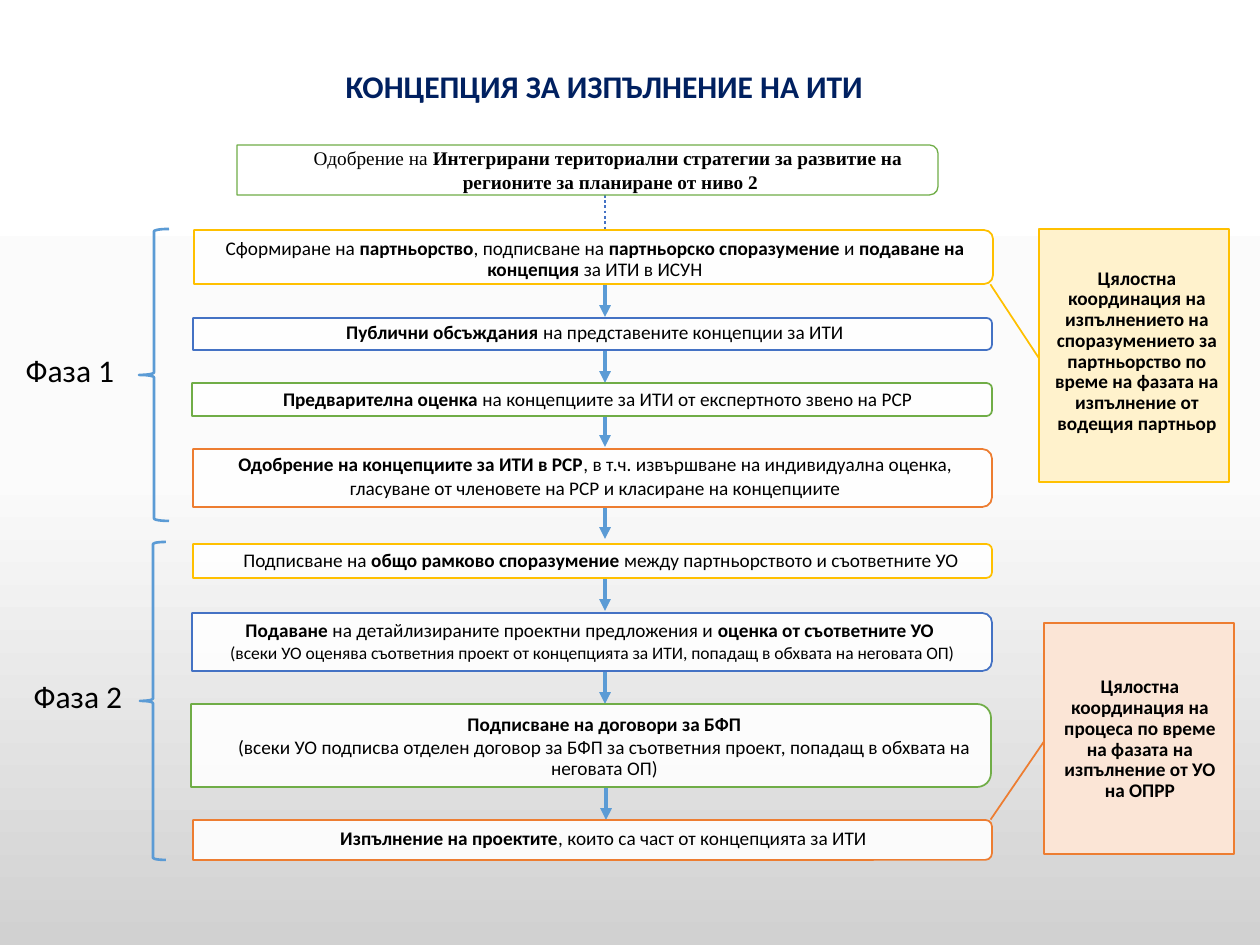
from copy import deepcopy
from pptx import Presentation, util as u
from pptx.dml.color import RGBColor
from pptx.enum import dml, shapes, text
from pptx.oxml.ns import qn
from lxml import etree

PX = 914400 / 126
AUTO = shapes.MSO_SHAPE
MID = text.MSO_ANCHOR.MIDDLE
TOP = text.MSO_ANCHOR.TOP
LEFT = text.PP_ALIGN.LEFT
MAIN = text.PP_ALIGN.CENTER
GOLD, BLUE, GREEN, RUST, SKY = "FFC000", "4472C4", "70AD47", "ED7D31", "5B9BD5"

deck = Presentation()
deck.slide_width, deck.slide_height = u.Inches(10), u.Inches(7.5)
page = deck.slides.add_slide(deck.slide_layouts[6])
hue = RGBColor.from_string


def draw(kind, box, edge, width, fill=None):
    item = page.shapes.add_shape(kind, *[round(n * PX) for n in box])
    item.shadow.inherit = False
    item.line.color.rgb = hue(edge)
    item.line.width = u.Pt(width)
    if fill:
        item.fill.solid()
        item.fill.fore_color.rgb = hue(fill)
    else:
        item.fill.background()
    return item


def write(box, paras, size=11, face="Calibri", ink="000000", align=MAIN,
          anchor=MID, inset=(10, 1, 1, 1), space=0.9, after=1.65, wrap=True):
    frame = page.shapes.add_textbox(*[round(n * PX) for n in box]).text_frame
    frame.word_wrap = wrap
    frame.vertical_anchor = anchor
    (frame.margin_left, frame.margin_top, frame.margin_right,
     frame.margin_bottom) = [round(n * PX) for n in inset]
    for i, line in enumerate(paras):
        para = frame.paragraphs[0] if i == 0 else frame.add_paragraph()
        para.alignment = align
        para.line_spacing = space
        para.space_after = u.Pt(after)
        for j, part in enumerate(line.split("*")):
            if part:
                run = para.add_run()
                run.text = part
                run.font.size = u.Pt(10 if line.startswith("(всеки УО оценява") else size)
                run.font.name = face
                run.font.bold = j % 2 == 1
                run.font.color.rgb = hue(ink)


back = page.background.fill
back.gradient()
back.gradient_angle = 270
stops = page._element.find(".//" + qn("a:gsLst"))
stops.insert(1, deepcopy(stops[0]))
for stop, (pos, tint) in zip(back.gradient_stops, [(0, "FFFFFF"), (0.5, "FBFBFB"), (1, "D1D1D1")]):
    stop.position = pos
    stop.color.rgb = hue(tint)

links = [(605, 195, 231)] + [(605, y, y + 32) for y in (285, 351, 415, 507, 579, 672)] + [(606, 788, 820)]
for i, (x, top, end) in enumerate(links):
    link = page.shapes.add_connector(shapes.MSO_CONNECTOR.STRAIGHT,
                                     *[round(n * PX) for n in (x, top, x, end)])
    link.line.color.rgb = hue(SKY if i else BLUE)
    link.line.width = u.Pt(2.25 if i else 1.5)
    if i:
        tip = etree.SubElement(link.line._get_or_add_ln(), qn("a:tailEnd"))
        tip.set("type", "triangle")
    else:
        link.line.dash_style = dml.MSO_LINE.ROUND_DOT
    etree.SubElement(link._element.spPr, qn("a:effectLst"))

notes = [
    ((1039, 229, 190, 253), GOLD, "FFF2CC", (0.512, 0.001, 0.219, -0.256), (1043, 265, 179, 173),
     "*Цялостна координация на изпълнението на споразумението за партньорство "
     "по време на фазата на изпълнение от водещия партньор*"),
    ((1044, 623, 190, 231), RUST, "FBE5D6", (0.512, 0.001, 0.851, -0.281), (1046, 672, 179, 135),
     "*Цялостна координация на процеса по време на фазата на изпълнение от УО на ОПРР*"),
]
for box, edge, fill, bends, area, words in notes:
    note = draw(AUTO.LINE_CALLOUT_1, box, edge, 1, fill)
    for i, bend in enumerate(bends):
        note.adjustments[i] = bend
    write(area, [words])

steps = [
    ((237, 145, 701, 50), GREEN, (249, 150, 714, 42),
     ["Одобрение на *Интегрирани териториални стратегии за развитие на *",
      "*регионите за планиране от ниво 2*"]),
    ((194, 230, 799, 54), GOLD, (193, 238, 795, 43),
     ["Сформиране на *партньорство*, подписване на *партньорско споразумение *"
      "и *подаване на концепция *за ИТИ в ИСУН"]),
    ((193, 318, 799, 32), BLUE, (261, 319, 659, 29),
     ["*Публични обсъждания *на представените концепции за ИТИ"]),
    ((192, 383, 800, 33), GREEN, (273, 384, 688, 33),
     ["*Предварителна оценка *на концепциите за ИТИ от експертното звено на РСР"]),
    ((193, 449, 799, 58), RUST, (219, 457, 748, 40),
     ["*Одобрение на концепциите за ИТИ в РСР*, в т.ч. извършване на индивидуална оценка, ",
      "гласуване от членовете на РСР и класиране на концепциите "]),
    ((193, 544, 799, 34), GOLD, (208, 544, 777, 35),
     ["Подписване на *общо рамково споразумение *между партньорството и съответните УО"]),
    ((192, 613, 800, 58), BLUE, (208, 622, 759, 40),
     ["*Подаване* на детайлизираните проектни предложения и *оценка от съответните УО *",
      "(всеки УО оценява съответния проект от концепцията за ИТИ, попадащ в обхвата на неговата ОП)"]),
    ((191, 704, 800, 83), GREEN, (217, 726, 766, 42),
     ["*Подписване на договори за БФП*",
      "(всеки УО подписва отделен договор за БФП за съответния проект, попадащ в обхвата на неговата ОП)"]),
    ((193, 820, 799, 40), RUST, (301, 825, 596, 28),
     ["*Изпълнение на проектите*, които са част от концепцията за ИТИ"]),
]
for i, ((x, y, w, h), edge, area, words) in enumerate(steps):
    turned = (x + (w - h) / 2, y + (h - w) / 2, h, w)
    bar = draw(AUTO.ROUND_2_SAME_RECTANGLE, turned, edge, 1 if i else 0.75, "FFFFFF" if i else None)
    bar.rotation = 90
    if i:
        tone = bar._element.spPr.find(qn("a:solidFill"))[0]
        etree.SubElement(tone, qn("a:alpha")).set("val", "90000")
    write(area, words, face="Calibri" if i else "Times New Roman",
          align=LEFT if i == 3 else MAIN)

plain = dict(size=18, anchor=TOP, inset=(13, 6, 13, 6), after=0)
for box, area, name in [((139, 229, 30, 292), (7, 345, 126, 50), "Фаза 1"),
                        ((140, 542, 26, 318), (15, 671, 126, 50), "Фаза 2")]:
    brace = draw(AUTO.LEFT_BRACE, box, SKY, 1.5)
    brace.adjustments[0], brace.adjustments[1] = 0.08, 0.5
    write(area, [name], space=1, **plain)

write((330, 42, 549, 71), ["*КОНЦЕПЦИЯ ЗА ИЗПЪЛНЕНИЕ НА ИТИ*"],
      ink="002060", space=1.5, wrap=False, **plain)

deck.save("out.pptx")
